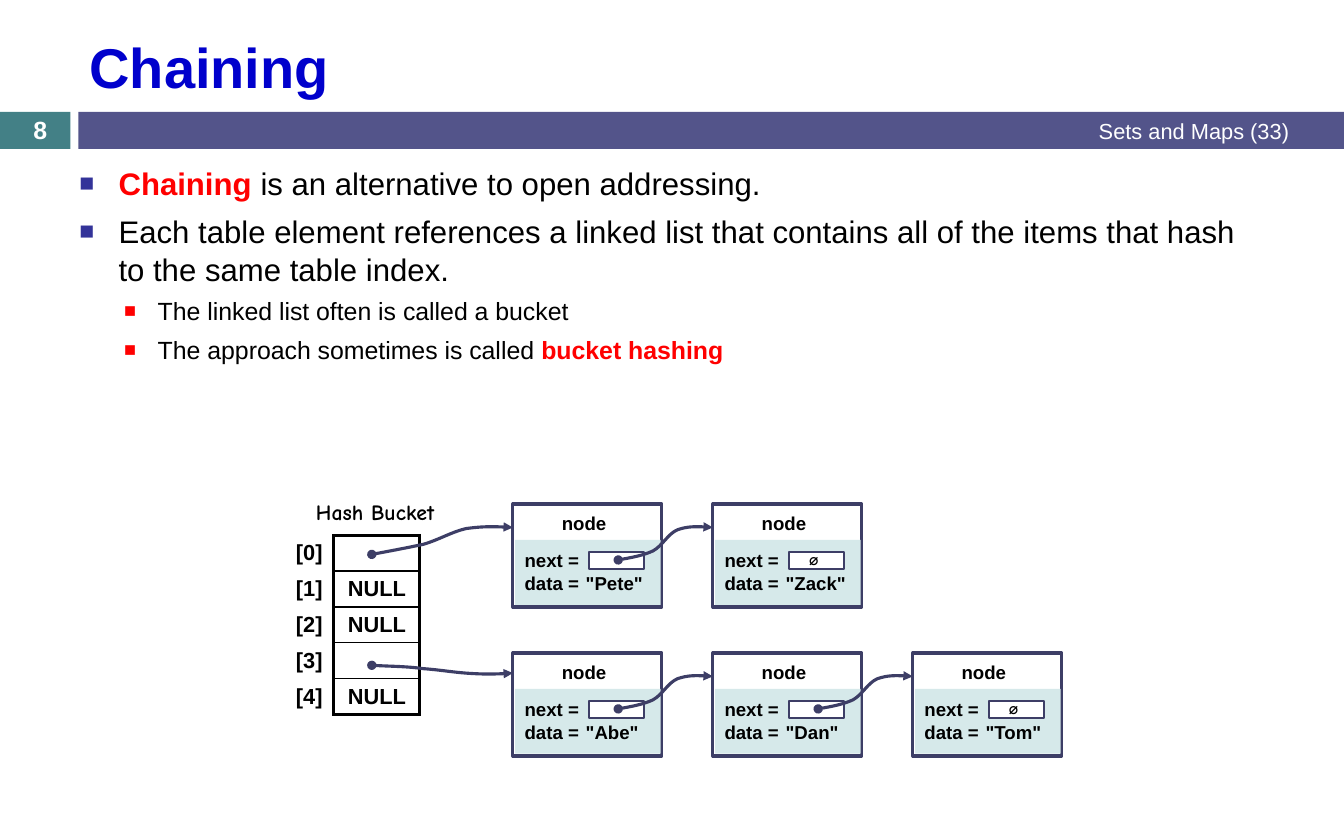
import lxml.etree
import pptx
import pptx.dml.color
import pptx.enum.shapes
import pptx.enum.text
import pptx.oxml.ns
import pptx.util

RGBColor = pptx.dml.color.RGBColor
BLACK = RGBColor(0x00, 0x00, 0x00)
WHITE = RGBColor(0xFF, 0xFF, 0xFF)
RED = RGBColor(0xFF, 0x00, 0x00)
TITLE_BLUE = RGBColor(0x00, 0x00, 0xCC)
BULLET_BLUE = RGBColor(0x33, 0x33, 0x99)
TEAL = RGBColor(0x43, 0x80, 0x86)
PURPLE = RGBColor(0x53, 0x54, 0x8A)
INK = RGBColor(0x3D, 0x3E, 0x66)
PALE = RGBColor(0xD6, 0xE9, 0xEA)

LEFT = pptx.enum.text.PP_ALIGN.LEFT
CENTER = pptx.enum.text.PP_ALIGN.CENTER
RIGHT = pptx.enum.text.PP_ALIGN.RIGHT
TOP = pptx.enum.text.MSO_ANCHOR.TOP
MIDDLE = pptx.enum.text.MSO_ANCHOR.MIDDLE

COLUMNS, ROWS = 120, 75
NODE_LEFT, NODE_PITCH = 45.8, 17.85
CHAINS = [(45, ["Pete", "Zack"]), (58.3, ["Abe", "Dan", "Tom"])]
LINK = [(9.4, 5), (10.5, 4.8), (11.6, 4.6), (12.5, 4.2), (13.4, 3.7),
        (13.8, 2.7), (14.7, 2.3), (15.6, 2), (16.7, 2), (17.85, 2.1)]
BUCKET_LINKS = [
    [(33.2, 49.5), (34.8, 49.2), (36.4, 48.9), (37.8, 48.6), (39.2, 48.2),
     (40.3, 47.5), (41.6, 47.2), (43, 47), (44.4, 47), (45.8, 47.1)],
    [(33.2, 59.4), (34.8, 59.5), (36.4, 59.5), (37.8, 59.7), (39.2, 59.8),
     (40.3, 60), (41.6, 60.1), (43, 60.2), (44.4, 60.2), (45.8, 60.1)],
]
BUCKETS = ["", "NULL", "NULL", "", "NULL"]
BULLETS = [
    (0, [("Chaining ", True), ("is an alternative to open addressing.", False)]),
    (0, [("Each table element references a linked list that contains all of "
          "the items that hash to the same table index.", False)]),
    (1, [("The linked list often is called a bucket", False)]),
    (1, [("The approach sometimes is called ", False), ("bucket hashing", True)]),
]
BULLET_LEVELS = [(20, 7, 0.35, 0.35, BULLET_BLUE), (16, 5.5, 0.7, 0.3, RED)]


def add_element(parent, tag, **attributes):
    return lxml.etree.SubElement(parent, pptx.oxml.ns.qn(tag), attributes)


def add_color(parent, color):
    add_element(parent, "a:srgbClr", val=str(color))


class SlideBuilder:
    font = "Arial"

    def __init__(self, presentation):
        self.slide = presentation.slides.add_slide(presentation.slide_layouts[6])
        self.column = presentation.slide_width / COLUMNS
        self.row = presentation.slide_height / ROWS

    def place(self, left, top, width, height):
        return (round(left * self.column), round(top * self.row),
                round(width * self.column), round(height * self.row))

    def style(self, run, size, color=BLACK, bold=False, font=None):
        run.font.name = font or self.font
        run.font.size = pptx.util.Pt(size)
        run.font.bold = bold
        run.font.color.rgb = color

    def rectangle(self, area, fill, line_width=0):
        shape = self.slide.shapes.add_shape(
            pptx.enum.shapes.MSO_SHAPE.RECTANGLE, *self.place(*area))
        shape.shadow.inherit = False
        shape.fill.solid()
        shape.fill.fore_color.rgb = fill
        if line_width:
            shape.line.color.rgb = INK
            shape.line.width = pptx.util.Pt(line_width)
        else:
            shape.line.fill.background()

    def frame(self, area, anchor=TOP, inset=True):
        text_frame = self.slide.shapes.add_textbox(*self.place(*area)).text_frame
        text_frame.word_wrap = True
        text_frame.vertical_anchor = anchor
        if not inset:
            text_frame.margin_left = text_frame.margin_right = 0
            text_frame.margin_top = text_frame.margin_bottom = 0
        return text_frame

    def text(self, area, words, size, color=BLACK, bold=True, align=LEFT,
             anchor=TOP, inset=True, font=None):
        text_frame = self.frame(area, anchor, inset)
        text_frame.text = words
        for paragraph in text_frame.paragraphs:
            paragraph.alignment = align
            for run in paragraph.runs:
                self.style(run, size, color, bold, font)

    def bullets(self, area, items):
        text_frame = self.frame(area)
        for index, (level, parts) in enumerate(items):
            paragraph = text_frame.add_paragraph() if index else text_frame.paragraphs[0]
            size, space, margin, hanging, color = BULLET_LEVELS[level]
            paragraph.level = level
            paragraph.space_before = pptx.util.Pt(space)
            for words, strong in parts:
                run = paragraph.add_run()
                run.text = words
                self.style(run, size, RED if strong else BLACK, strong)
            properties = paragraph._p.get_or_add_pPr()
            properties.set("marL", str(pptx.util.Inches(margin)))
            properties.set("indent", str(-pptx.util.Inches(hanging)))
            add_color(add_element(properties, "a:buClr"), color)
            add_element(properties, "a:buSzPct", val="80000")
            add_element(properties, "a:buFont", typeface=self.font)
            add_element(properties, "a:buChar", char="■")

    def border(self, cell, side, points):
        line = add_element(cell._tc.get_or_add_tcPr(), f"a:ln{side}",
                           w=str(pptx.util.Pt(points)))
        add_color(add_element(line, "a:solidFill"), BLACK)

    def bucket_table(self, area, widths, values):
        table = self.slide.shapes.add_table(
            len(values), len(widths), *self.place(*area)).table
        table.first_row = table.horz_banding = False
        for column, width in zip(table.columns, widths):
            column.width = round(width * self.column)
        last = len(values) - 1
        for index, value in enumerate(values):
            label, bucket = table.cell(index, 0), table.cell(index, 1)
            self.border(label, "R", 2.25)
            for side, points in (("L", 2.25), ("R", 2.25),
                                 ("T", 1 if index else 2.25),
                                 ("B", 1 if index < last else 2.25)):
                self.border(bucket, side, points)
            for cell, words, align in ((label, f"[{index}]", RIGHT),
                                       (bucket, value, CENTER)):
                cell.margin_top = cell.margin_bottom = 0
                cell.vertical_anchor = MIDDLE
                cell.fill.solid()
                cell.fill.fore_color.rgb = WHITE
                cell.text = words
                paragraph = cell.text_frame.paragraphs[0]
                paragraph.alignment = align
                for run in paragraph.runs:
                    self.style(run, 14, bold=True)

    def curve(self, points):
        corners = [self.place(x, y, 0, 0)[:2] for x, y in points]
        builder = self.slide.shapes.build_freeform(*corners[0])
        builder.add_line_segments(corners[1:], close=False)
        shape = builder.convert_to_shape()
        outline = shape._element.find(".//" + pptx.oxml.ns.qn("a:path"))
        segments = outline.findall(pptx.oxml.ns.qn("a:lnTo"))
        for start in range(0, len(segments), 3):
            bezier = add_element(outline, "a:cubicBezTo")
            for segment in segments[start:start + 3]:
                bezier.append(segment[0])
                outline.remove(segment)
        shape.shadow.inherit = False
        shape.fill.background()
        shape.line.color.rgb = INK
        shape.line.width = pptx.util.Pt(2)
        line = shape.line._get_or_add_ln()
        add_element(line, "a:headEnd", type="oval")
        add_element(line, "a:tailEnd", type="triangle")

    def node(self, left, top, data, is_last):
        self.rectangle((left, top, 13.3, 9.2), WHITE, 2)
        self.rectangle((left + 0.2, top + 3.2, 13, 5.8), PALE)
        self.text((left + 0.2, top + 4.05, 5.7, 4), "next =\ndata =", 12,
                  align=RIGHT, inset=False)
        self.rectangle((left + 6.8, top + 4.3, 4.9, 1.5), WHITE, 1)
        self.text((left + 6.5, top + 6.1, 5.7, 2), f'"{data}"', 12, inset=False)
        self.text((left + 3.5, top + 0.7, 5.7, 2), "node", 12,
                  align=CENTER, inset=False)
        if is_last:
            self.text((left + 7.6, top + 3.7, 3.2, 2.7), "∅", 10,
                      font="DejaVu Sans Mono")


def main():
    presentation = pptx.Presentation()
    presentation.slide_width = pptx.util.Inches(12)
    presentation.slide_height = pptx.util.Inches(7.5)
    builder = SlideBuilder(presentation)

    builder.rectangle((0, 10, 6.3, 3.3), TEAL)
    builder.rectangle((7, 10, 113, 3.3), PURPLE)
    builder.text((7, 1.9, 109.1, 8), "Chaining", 36, TITLE_BLUE, anchor=MIDDLE)
    builder.bullets((6.1, 14.2, 107.2, 20.8), BULLETS)
    builder.text((45, 9.9, 71.1, 3.5), "Sets and Maps (33)", 14, WHITE,
                 bold=False, align=RIGHT, anchor=MIDDLE)
    builder.text((0, 10.1, 7.2, 3), "8", 16, WHITE, align=CENTER, anchor=MIDDLE)

    builder.bucket_table((24.2, 47.8, 13.3, 16), (5.6, 7.7), BUCKETS)
    builder.text((25.7, 44, 15.6, 3.4), "Hash Bucket", 14, align=CENTER,
                 font="Comic Neue")
    for (top, names), bucket_link in zip(CHAINS, BUCKET_LINKS):
        lefts = [NODE_LEFT + NODE_PITCH * index for index in range(len(names))]
        for left, name in zip(lefts, names):
            builder.node(left, top, name, name == names[-1])
        builder.curve(bucket_link)
        for left in lefts[:-1]:
            builder.curve([(left + x, top + y) for x, y in LINK])

    presentation.save("out.pptx")


if __name__ == "__main__":
    main()
